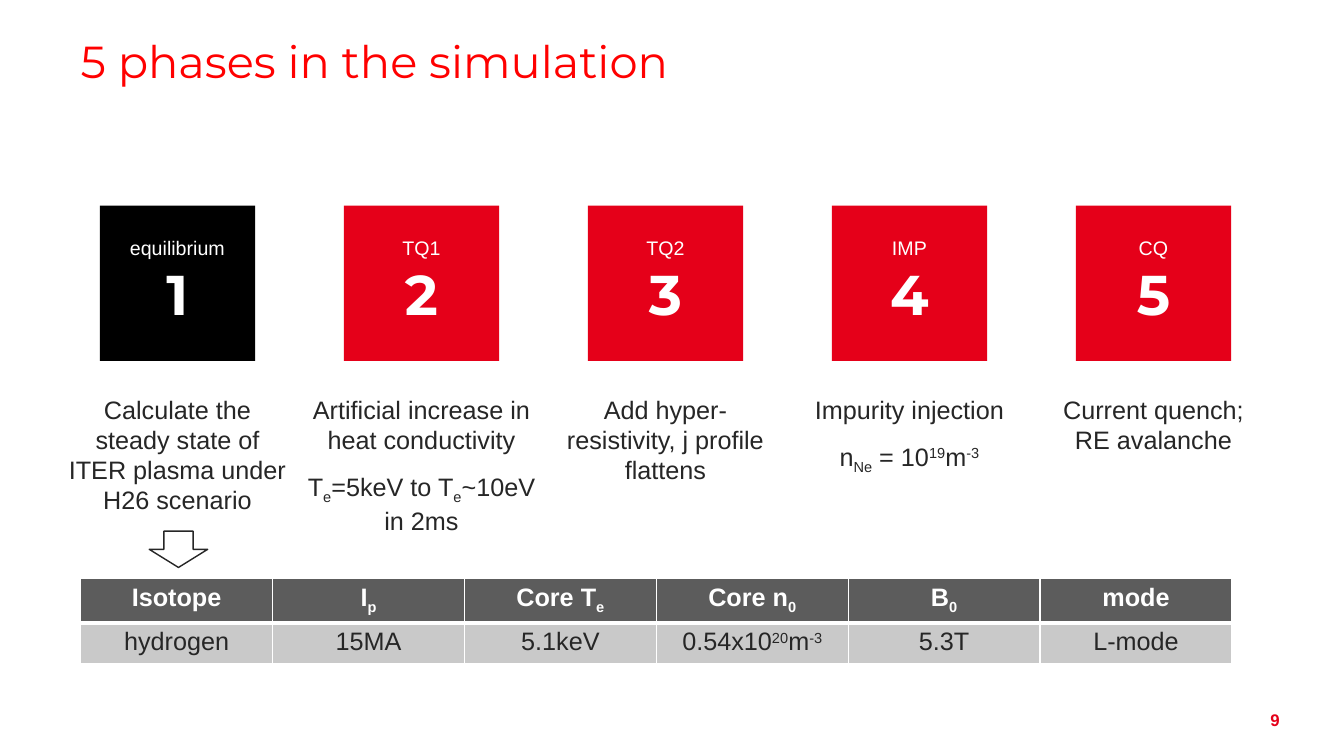
from dataclasses import dataclass

from lxml import etree
from pptx import Presentation
from pptx.dml.color import RGBColor
from pptx.enum.shapes import MSO_SHAPE
from pptx.enum.text import MSO_ANCHOR, PP_ALIGN
from pptx.oxml.ns import qn
from pptx.util import Inches, Pt

RECT, ARROW = MSO_SHAPE.RECTANGLE, MSO_SHAPE.RIGHT_ARROW
TOP, MIDDLE = MSO_ANCHOR.TOP, MSO_ANCHOR.MIDDLE
LEFT, CENTER, RIGHT = PP_ALIGN.LEFT, PP_ALIGN.CENTER, PP_ALIGN.RIGHT


@dataclass(frozen=True)
class Theme:
    body_font: str = "Arial"
    head_font: str = "Montserrat"
    title_red: str = "FF0000"
    red: str = "E50019"
    black: str = "000000"
    white: str = "FFFFFF"
    ink: str = "262626"
    header: str = "5C5C5C"
    row: str = "C9C9C9"
    title: int = 32
    number: int = 40
    body: int = 18
    label: int = 14
    page: int = 12


T = Theme()
SLIDE_W, SLIDE_H = 13.33, 7.5
MARGIN, CONTENT_W = 0.8, 11.42
SQUARE, PITCH = 1.54, 2.42
SCRIPTS = {"_": "-25000", "^": "30000"}

PHASES = [
    ("equilibrium", T.black, 2.17,
     ["Calculate the steady state of ITER plasma under H26 scenario"]),
    ("TQ1", T.red, 2.45,
     ["Artificial increase in heat conductivity",
      "T|_e|=5keV to T|_e|~10eV in 2ms"]),
    ("TQ2", T.red, 2.17, ["Add hyper-resistivity, j profile flattens"]),
    ("IMP", T.red, 2.4, ["Impurity injection", "n|_Ne| = 10|^19|m|^-3"]),
    ("CQ", T.red, 2.17, ["Current quench; RE avalanche"]),
]
PARAMETERS = [
    ["Isotope", "I|_p", "Core T|_e", "Core n|_0", "B|_0", "mode"],
    ["hydrogen", "15MA", "5.1keV", "0.54x10|^20|m|^-3", "5.3T", "L-mode"],
]


def rgb(color):
    return RGBColor.from_string(color)


def write(p, text, size, color, font=T.body_font, bold=False, align=CENTER):
    p.alignment = align
    for piece in text.split("|"):
        r = p.add_run()
        r.text = piece[1:] if piece[0] in SCRIPTS else piece
        r.font.size, r.font.name, r.font.bold = Pt(size), font, bold
        r.font.color.rgb = rgb(color)
        if piece[0] in SCRIPTS:
            r.font._element.set("baseline", SCRIPTS[piece[0]])


def set_frame(tf, anchor, side, edge):
    tf.word_wrap = True
    tf.vertical_anchor = anchor
    tf.margin_left = tf.margin_right = Inches(side)
    tf.margin_top = tf.margin_bottom = Inches(edge)


def add_title(s, x, y, w, h):
    sp = s.shapes.title
    sp.left, sp.top, sp.width, sp.height = map(Inches, (x, y, w, h))
    set_frame(sp.text_frame, TOP, 0, 0.05)
    p = sp.text_frame.paragraphs[0]
    p.line_spacing = 0.9
    write(p, "5 phases in the simulation", T.title, T.title_red,
          T.head_font, align=LEFT)


def add_square(s, x, y, size, label, number, color):
    sp = s.shapes.add_shape(RECT, *map(Inches, (x, y, size, size)))
    sp.shadow.inherit = False
    sp.fill.solid()
    sp.fill.fore_color.rgb = rgb(color)
    sp.line.fill.background()
    tf = sp.text_frame
    set_frame(tf, MIDDLE, 0.04, 0.04)
    label_p, number_p = tf.paragraphs[0], tf.add_paragraph()
    label_p.line_spacing = number_p.line_spacing = 0.9
    number_p.space_before = Pt(5)
    write(label_p, label, T.label, T.white)
    write(number_p, str(number), T.number, T.white, T.head_font, True)


def add_caption(s, x, y, w, h, lines):
    tf = s.shapes.add_textbox(*map(Inches, (x, y, w, h))).text_frame
    set_frame(tf, TOP, 0, 0.05)
    for i, line in enumerate(lines):
        p = tf.add_paragraph() if i else tf.paragraphs[0]
        if i:
            p.space_before = Pt(12)
        write(p, line, T.body, T.ink)


def add_phases(s, x, y):
    for i, (label, color, width, lines) in enumerate(PHASES):
        left = x + i * PITCH
        add_square(s, left, y, SQUARE, label, i + 1, color)
        add_caption(s, left + (SQUARE - width) / 2, y + 1.82, width, 2.61, lines)


def set_borders(cell, widths):
    tcPr = cell._tc.get_or_add_tcPr()
    for i, (side, width) in enumerate(widths.items()):
        ln = etree.Element(qn(f"a:ln{side}"), w=str(Pt(width)))
        fill = etree.SubElement(ln, qn("a:solidFill"))
        etree.SubElement(fill, qn("a:srgbClr"), val=T.white)
        tcPr.insert(i, ln)


def add_parameters(s, x, y, w, h):
    rows, cols = len(PARAMETERS), len(PARAMETERS[0])
    table = s.shapes.add_table(rows, cols, *map(Inches, (x, y, w, h))).table
    for i, row in enumerate(PARAMETERS):
        head = i == 0
        for j, text in enumerate(row):
            cell = table.cell(i, j)
            cell.fill.solid()
            cell.fill.fore_color.rgb = rgb(T.header if head else T.row)
            set_borders(cell, {"L": 1, "R": 1, "T": 1 if head else 3,
                               "B": 3 if head else 1})
            write(cell.text_frame.paragraphs[0], text, T.body,
                  T.white if head else T.ink, bold=head)


def add_down_arrow(s, x, y, w, h):
    sp = s.shapes.add_shape(ARROW, *map(Inches, (x, y, w, h)))
    sp.rotation = 90
    sp.shadow.inherit = False
    sp.fill.solid()
    sp.fill.fore_color.rgb = rgb(T.white)
    sp.line.color.rgb = rgb(T.ink)
    sp.line.width = Pt(1)


def add_page_number(s, x, y, w, h):
    tf = s.shapes.add_textbox(*map(Inches, (x, y, w, h))).text_frame
    set_frame(tf, MIDDLE, 0.1, 0.05)
    write(tf.paragraphs[0], "9", T.page, T.red, bold=True, align=RIGHT)


def main():
    prs = Presentation()
    prs.slide_width, prs.slide_height = Inches(SLIDE_W), Inches(SLIDE_H)
    s = prs.slides.add_slide(prs.slide_layouts[5])
    add_title(s, MARGIN, 0.34, SLIDE_W - 2 * MARGIN, 0.95)
    add_phases(s, 0.99, 2.04)
    add_parameters(s, MARGIN, 5.74, CONTENT_W, 0.81)
    add_down_arrow(s, 1.59, 5.16, 0.36, 0.58)
    add_page_number(s, 12.03, 6.94, 0.76, 0.4)
    prs.save("out.pptx")


if __name__ == "__main__":
    main()
